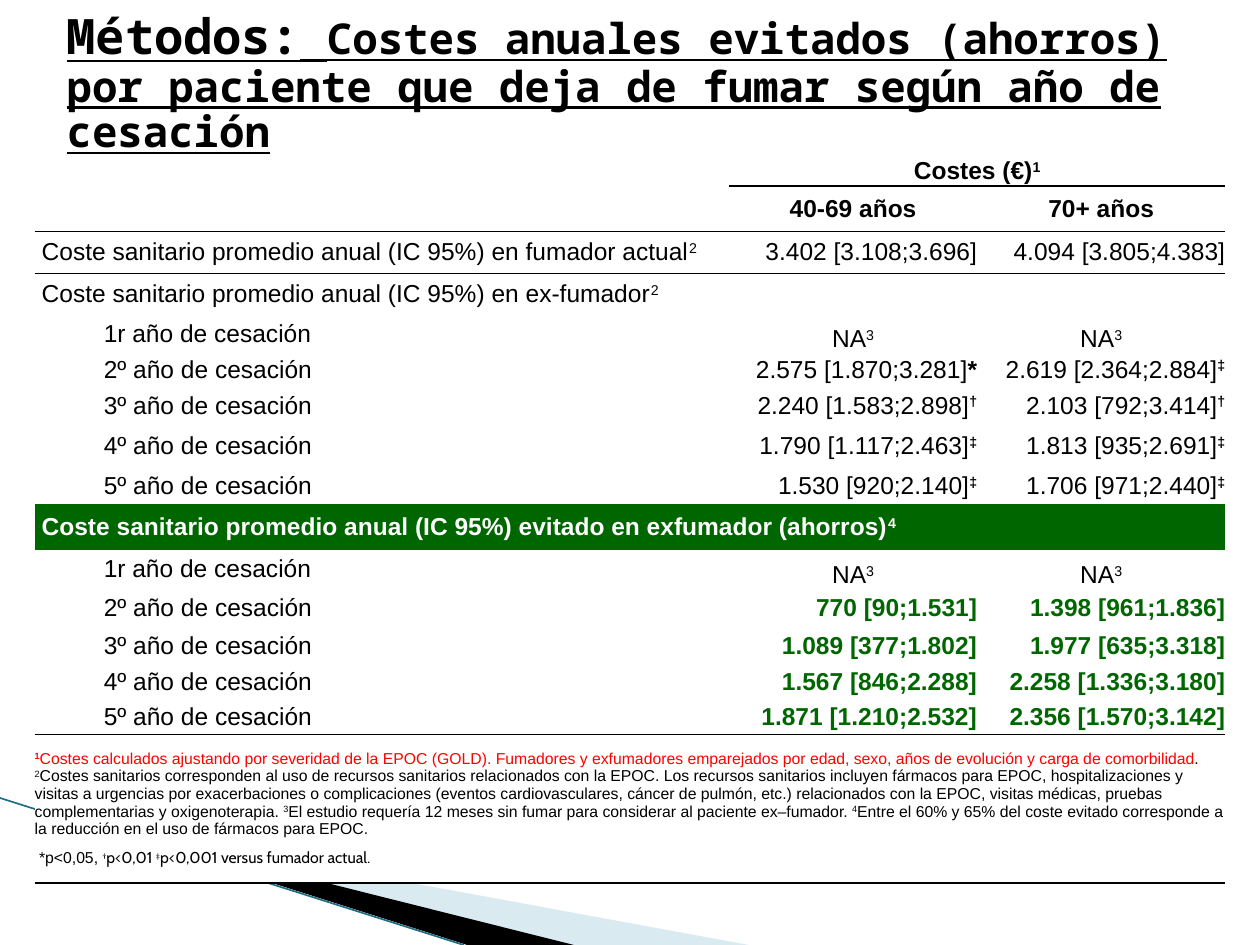
from lxml.etree import SubElement
from pptx import Presentation
from pptx.dml.color import RGBColor
from pptx.enum.shapes import MSO_CONNECTOR
from pptx.enum.text import MSO_ANCHOR as ANCHOR, PP_ALIGN as ALIGN
from pptx.oxml import parse_xml
from pptx.oxml.ns import nsdecls, qn
from pptx.util import Pt

BLACK = RGBColor(0, 0, 0)
WHITE = RGBColor(0xFF, 0xFF, 0xFF)
GREEN = RGBColor(0, 0x66, 0)
RED = RGBColor(0xFF, 0, 0)
SKY = RGBColor(0xA0, 0xCB, 0xDC)
TEAL = RGBColor(0x1F, 0x6E, 0x86)

NO_STYLE = "{2D5ABB26-0587-4C30-8999-92F81FD0307C}"
COLS = [396.8, 141.8, 141.8]
ROWS = [17, 26, 24, 24, 21.5, 19, 22, 24.5, 21, 26, 22.5, 21.5, 21.5, 20, 20, 85]
COST = "Coste sanitario promedio anual (IC 95%) "
YEARS = [f"{n} año de cesación" for n in ("1r", "2º", "3º", "4º", "5º")]

# Each cost is its text and its mark
SMOKER = [("3.402 [3.108;3.696]", ""), ("4.094 [3.805;4.383]", "")]
EX_SMOKER = [
    [("NA", "3"), ("NA", "3")],
    [("2.575 [1.870;3.281]", "*"), ("2.619 [2.364;2.884]", "‡")],
    [("2.240 [1.583;2.898]", "†"), ("2.103 [792;3.414]", "†")],
    [("1.790 [1.117;2.463]", "‡"), ("1.813 [935;2.691]", "‡")],
    [("1.530 [920;2.140]", "‡"), ("1.706 [971;2.440]", "‡")],
]
SAVINGS = [
    [("NA", "3"), ("NA", "3")],
    [("770 [90;1.531]", ""), ("1.398 [961;1.836]", "")],
    [("1.089 [377;1.802]", ""), ("1.977 [635;3.318]", "")],
    [("1.567 [846;2.288]", ""), ("2.258 [1.336;3.180]", "")],
    [("1.871 [1.210;2.532]", ""), ("2.356 [1.570;3.142]", "")],
]
NOTES = [
    ("2", "Costes sanitarios corresponden al uso de recursos sanitarios relacionados "
          "con la EPOC. Los recursos sanitarios incluyen fármacos para EPOC, "
          "hospitalizaciones y visitas a urgencias por exacerbaciones o complicaciones "
          "(eventos cardiovasculares, cáncer de pulmón, etc.) relacionados con la EPOC, "
          "visitas médicas, pruebas complementarias y oxigenoterapia. "),
    ("3", "El estudio requería 12 meses sin fumar para considerar al paciente ex–fumador. "),
    ("4", "Entre el 60% y 65% del coste evitado corresponde a la reducción en el uso "
          "de fármacos para EPOC."),
]


def set_font(font, size, color=BLACK, bold=False, name="Arial"):
    font.size, font.bold, font.name = Pt(size), bold, name
    font.color.rgb = color


def add_run(p, text, raised=False):
    r = p.add_run()
    r.text = text
    if raised:
        r._r.get_or_add_rPr().set("baseline", "30000")
    return r


def add_wedge(slide, points, color, alpha=None):
    builder = slide.shapes.build_freeform(Pt(points[0][0]), Pt(points[0][1]))
    builder.add_line_segments([(Pt(x), Pt(y)) for x, y in points[1:]])
    sp = builder.convert_to_shape()
    sp.shadow.inherit = False
    sp.fill.solid()
    sp.fill.fore_color.rgb = color
    sp.line.fill.background()
    if alpha:
        clr = sp._element.spPr.find(".//" + qn("a:srgbClr"))
        SubElement(clr, qn("a:alpha")).set("val", str(alpha * 1000))


def add_corner(slide, left, top, bottom):
    """Draw the wedges and the line that run down to the bottom edge."""
    add_wedge(slide, [(left + 39.6, top + 12.6), (428, bottom), (328, bottom)], SKY, 40)
    add_wedge(slide, [(left + 38.2, top + 11.3), (328, bottom), (267, bottom)], BLACK)
    line = slide.shapes.add_connector(
        MSO_CONNECTOR.STRAIGHT, Pt(left), Pt(top), Pt(265), Pt(bottom))
    line.line.color.rgb = TEAL
    line.line.width = Pt(0.95)
    SubElement(line._element.spPr, qn("a:effectLst"))


def add_rule(tbl, row, first_col=0):
    """Draw a black line below a row."""
    for col in range(first_col, len(COLS)):
        for tag, r in (("lnB", row), ("lnT", row + 1)):
            if r < len(ROWS):
                tbl.cell(r, col)._tc.get_or_add_tcPr().append(parse_xml(
                    f'<a:{tag} {nsdecls("a")} w="12700"><a:solidFill>'
                    f'<a:srgbClr val="{BLACK}"/></a:solidFill></a:{tag}>'))


def fill_cell(cell, text, mark="", align=ALIGN.LEFT, color=BLACK, bold=False,
              indent=0, anchor=ANCHOR.MIDDLE):
    cell.vertical_anchor = anchor
    cell.margin_left = Pt(indent)
    p = cell.text_frame.paragraphs[0]
    p.alignment = align
    set_font(p.font, 14, color, bold)
    add_run(p, text)
    if mark:
        r = add_run(p, mark, raised=mark != "*")
        r.font.bold = bold or mark in "*†‡"


def fill_costs(tbl, row, costs, color=BLACK, bold=False):
    for col, (text, mark) in enumerate(costs, 1):
        if text == "NA":
            fill_cell(tbl.cell(row, col), text, mark, ALIGN.CENTER, anchor=ANCHOR.BOTTOM)
        else:
            fill_cell(tbl.cell(row, col), text, mark, ALIGN.RIGHT, color, bold)


def fill_years(tbl, first_row, costs, color=BLACK, bold=False):
    for row, (year, pair) in enumerate(zip(YEARS, costs), first_row):
        fill_cell(tbl.cell(row, 0), year, indent=39.5)
        fill_costs(tbl, row, pair, color, bold)


def fill_notes(cell):
    cell.vertical_anchor = ANCHOR.TOP
    cell.margin_top = Pt(9)
    p = cell.text_frame.paragraphs[0]
    set_font(p.font, 9)
    first = add_run(p, "1", raised=True)
    first.font.bold = True
    body = add_run(p, "Costes calculados ajustando por severidad de la EPOC (GOLD). Fumadores "
                      "y exfumadores emparejados por edad, sexo, años de evolución y carga "
                      "de comorbilidad")
    for r in (first, body):
        r.font.color.rgb = RED
    add_run(p, ". ")
    for mark, text in NOTES:
        add_run(p, mark, raised=True)
        add_run(p, text)

    p = cell.text_frame.add_paragraph()
    p.space_before = p.space_after = Pt(6)
    p._p.get_or_add_pPr().set("marL", str(Pt(2.5)))
    set_font(p.font, 9)
    add_run(p, "*p<0,05, ")
    for text in ("†", "p<0,01 ", "‡", "p<0,001 versus fumador actual."):
        add_run(p, text, raised=text in "†‡").font.name = "Cabin"


def add_cost_table(slide, left, top):
    frame = slide.shapes.add_table(len(ROWS), len(COLS), Pt(left), Pt(top),
                                   Pt(sum(COLS)), Pt(sum(ROWS)))
    tbl = frame.table
    tbl.first_row = tbl.horz_banding = False
    tbl._tbl.tblPr.find(qn("a:tableStyleId")).text = NO_STYLE
    for column, width in zip(tbl.columns, COLS):
        column.width = Pt(width)
    for row, height in zip(tbl.rows, ROWS):
        row.height = Pt(height)

    add_rule(tbl, 0, first_col=1)
    for row in (1, 14, 15):
        add_rule(tbl, row)
    for row in range(len(ROWS)):
        for cell in tbl.rows[row].cells:
            cell.fill.solid()
            cell.fill.fore_color.rgb = GREEN if row == 9 else WHITE
            cell.margin_left = cell.margin_right = cell.margin_top = cell.margin_bottom = 0
    tbl.cell(0, 0).merge(tbl.cell(1, 0))
    tbl.cell(0, 1).merge(tbl.cell(0, 2))
    for row in (3, 9, 15):
        tbl.cell(row, 0).merge(tbl.cell(row, 2))

    fill_cell(tbl.cell(0, 1), "Costes (€)", "1", ALIGN.CENTER, bold=True)
    for col, ages in enumerate(("40-69 años", "70+ años"), 1):
        fill_cell(tbl.cell(1, col), ages, align=ALIGN.CENTER, bold=True)
    fill_cell(tbl.cell(2, 0), COST + "en fumador actual", "2", indent=4)
    fill_costs(tbl, 2, SMOKER)
    fill_cell(tbl.cell(3, 0), COST + "en ex-fumador", "2", indent=4)
    fill_years(tbl, 4, EX_SMOKER)
    fill_cell(tbl.cell(9, 0), COST + "evitado en exfumador (ahorros)", "4",
              color=WHITE, bold=True, indent=4)
    fill_years(tbl, 10, SAVINGS, GREEN, True)
    fill_notes(tbl.cell(15, 0))


def add_title(slide, left, top, width, height):
    tf = slide.shapes.add_textbox(Pt(left), Pt(top), Pt(width), Pt(height)).text_frame
    tf.word_wrap = True
    tf.vertical_anchor = ANCHOR.MIDDLE
    p = tf.paragraphs[0]
    p.line_spacing = 0.9
    set_font(p.font, 24.3, bold=True, name="Noto Sans Mono")
    p.font.underline = True
    add_run(p, "Métodos:").font.size = Pt(27.9)
    add_run(p, " ").font.size = Pt(25.2)
    add_run(p, "Costes anuales evitados (ahorros) por paciente que deja de fumar "
               "según año de cesación")


def main():
    prs = Presentation()
    prs.slide_width, prs.slide_height = Pt(720), Pt(540)
    slide = prs.slides.add_slide(prs.slide_layouts[6])
    add_corner(slide, 0, 456, 540)
    add_cost_table(slide, 19.8, 89.3)
    add_title(slide, 31, 15, 648, 67)
    prs.save("out.pptx")


if __name__ == "__main__":
    main()
